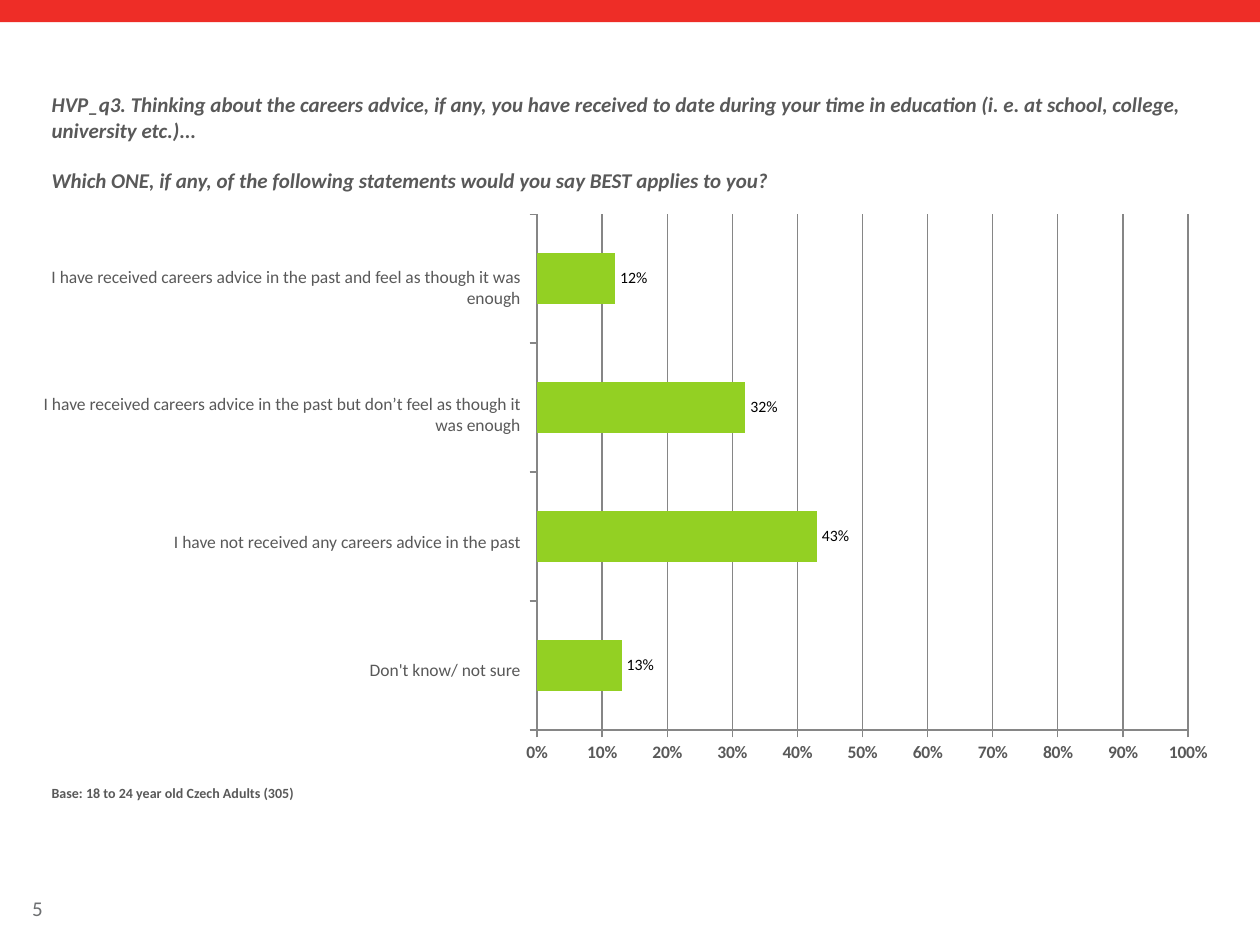
from pptx import Presentation
from pptx.chart.data import CategoryChartData
from pptx.dml.color import RGBColor
from pptx.enum.chart import XL_CHART_TYPE, XL_LABEL_POSITION, XL_TICK_LABEL_POSITION, XL_TICK_MARK
from pptx.enum.shapes import MSO_SHAPE
from pptx.enum.text import MSO_ANCHOR, PP_ALIGN
from pptx.oxml import parse_xml
from pptx.oxml.ns import nsdecls
from pptx.util import Cm, Pt

RED, GREEN, DARK, GREY, LINE = "EE2D27", "93D023", "595959", "6D6F71", "868686"
ASK = [
    "HVP_q3. Thinking about the careers advice, if any, you have received to date during "
    "your time in education (i. e. at school, college, university etc.)...",
    "Which ONE, if any, of the following statements would you say BEST applies to you?",
]
# Answers from top to bottom with their shares
DATA = [
    ("I have received careers advice in the past and feel as though it was enough", 0.12),
    ("I have received careers advice in the past but don’t feel as though it was enough", 0.32),
    ("I have not received any careers advice in the past", 0.43),
    ("Don't know/ not sure", 0.13),
]


def color(code):
    return RGBColor.from_string(code)


def style(font, tint=DARK, **props):
    font.color.rgb = color(tint)
    for key, value in {"name": "Calibri", **props}.items():
        setattr(font, key, value)


def write(slide, box, lines, anchor=MSO_ANCHOR.TOP, align=PP_ALIGN.LEFT, gap=0, **props):
    frame = slide.shapes.add_textbox(*map(Cm, box)).text_frame
    frame.word_wrap = True
    frame.vertical_anchor = anchor
    for i, line in enumerate(lines):
        para = frame.add_paragraph() if i else frame.paragraphs[0]
        para.alignment = align
        if i:
            para.space_before = Pt(gap)
        run = para.add_run()
        run.text = line
        style(run.font, **props)


def band(slide, box):
    bar = slide.shapes.add_shape(MSO_SHAPE.RECTANGLE, *map(Cm, box))
    bar.shadow.inherit = False
    bar.fill.solid()
    bar.fill.fore_color.rgb = color(RED)
    bar.line.fill.background()


def answers(slide, box):
    left, top, width, height = box
    row = height / len(DATA)
    for i, (text, _) in enumerate(DATA):
        write(slide, (left, top + i * row, width, row), [text],
              MSO_ANCHOR.MIDDLE, PP_ALIGN.RIGHT, size=Pt(10))


def rule(line):
    line.color.rgb = color(LINE)
    line.width = Pt(0.75)


def bars(slide, box):
    data = CategoryChartData(number_format="0%")
    # Bars are stacked upwards, so the last answer comes first
    data.categories = [str(i + 1) for i in range(len(DATA))]
    data.add_series("Series 1", [share for _, share in reversed(DATA)])
    chart = slide.shapes.add_chart(XL_CHART_TYPE.BAR_CLUSTERED, *map(Cm, box), data).chart
    chart.has_legend = chart.has_title = False
    style(chart.font, GREY, name="Manrope", size=Pt(18))

    # Bars and their labels
    plot = chart.plots[0]
    plot.vary_by_categories = False
    plot.gap_width, plot.overlap = 150, -10
    fill = plot.series[0].format.fill
    fill.solid()
    fill.fore_color.rgb = color(GREEN)
    plot.has_data_labels = True
    tags = plot.data_labels
    style(tags.font, "000000", size=Pt(9))
    for key, value in {"show_value": True, "number_format": "0%",
                       "number_format_is_linked": False,
                       "position": XL_LABEL_POSITION.OUTSIDE_END}.items():
        setattr(tags, key, value)

    # Axes
    cat, val = chart.category_axis, chart.value_axis
    for axis, bold, spot in ((cat, False, XL_TICK_LABEL_POSITION.NONE),
                             (val, True, XL_TICK_LABEL_POSITION.LOW)):
        axis.major_tick_mark = XL_TICK_MARK.OUTSIDE
        axis.minor_tick_mark = XL_TICK_MARK.NONE
        axis.tick_label_position = spot
        style(axis.tick_labels.font, size=Pt(10), bold=bold)
        rule(axis.format.line)
    for key, value in {"minimum_scale": 0, "maximum_scale": 1, "major_unit": 0.1,
                       "has_major_gridlines": True}.items():
        setattr(val, key, value)
    val.tick_labels.number_format = "0%"
    val.tick_labels.number_format_is_linked = False
    rule(val.major_gridlines.format.line)

    # Fixed plot area, so that the bars line up with the answers
    area = chart._chartSpace.chart.plotArea
    for old in area.findall("{*}layout"):
        area.remove(old)
    spots = "".join(f'<c:{tag} val="{value}"/>' for tag, value in (
        ("layoutTarget", "inner"), ("xMode", "edge"), ("yMode", "edge"),
        ("x", 0.034), ("y", 0.02), ("w", 0.918), ("h", 0.904)))
    area.insert(0, parse_xml(
        f'<c:layout {nsdecls("c")}><c:manualLayout>{spots}</c:manualLayout></c:layout>'))


def main():
    deck = Presentation()
    deck.slide_width, deck.slide_height = Cm(25.4), Cm(19.05)
    slide = deck.slides.add_slide(deck.slide_layouts[6])
    band(slide, (0, 0, 25.4, 0.45))
    # Page number
    write(slide, (0.4, 17.93, 1.95, 0.76), ["5"], MSO_ANCHOR.MIDDLE, tint=GREY, size=Pt(12))
    # Question
    write(slide, (0.79, 1.73, 23.85, 2.36), ASK, gap=14.4, size=Pt(12), bold=True, italic=True)
    bars(slide, (10.34, 4.09, 14.3, 11.5))
    answers(slide, (0.4, 4.5, 10.34, 10.28))
    # Base size
    write(slide, (0.79, 15.7, 23.85, 1.09), ["Base: 18 to 24 year old Czech Adults (305)"],
          size=Pt(8), bold=True)
    deck.save("out.pptx")


if __name__ == "__main__":
    main()
